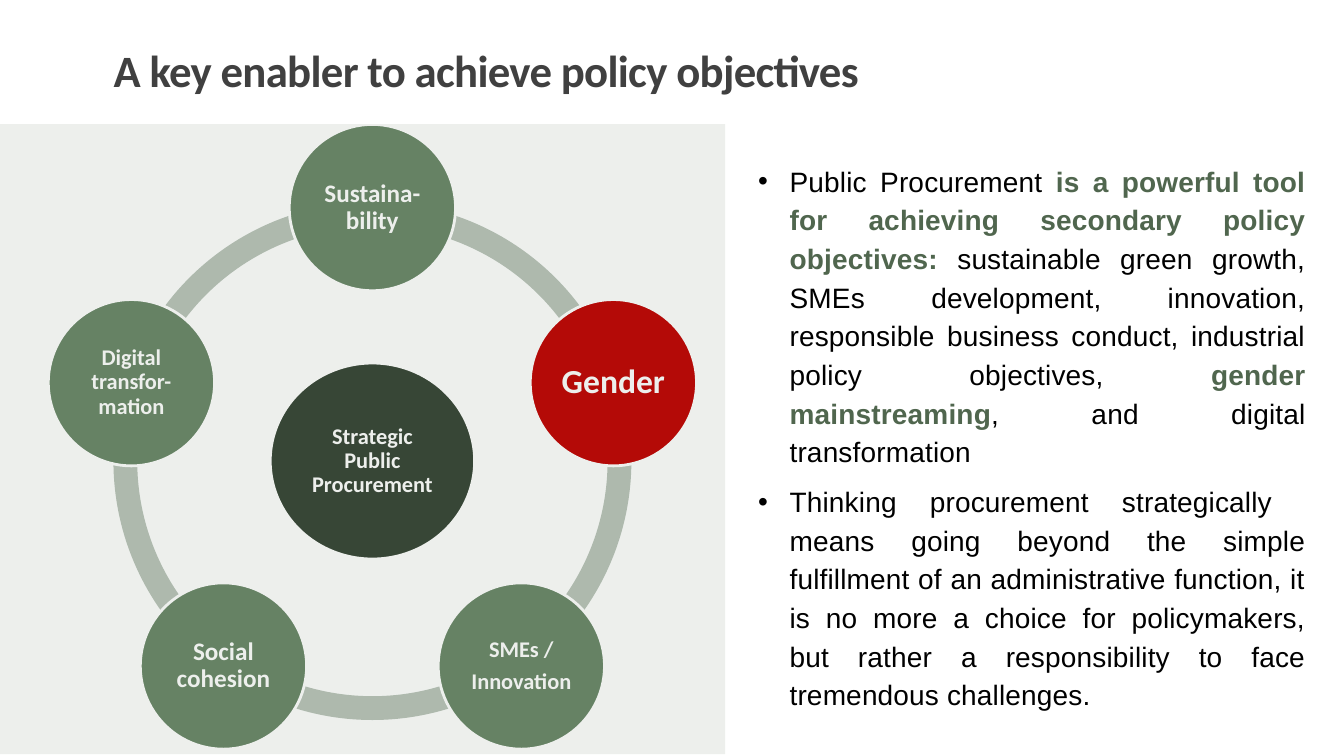
import math

from lxml import etree
from pptx import Presentation
from pptx.dml.color import RGBColor
from pptx.enum import shapes, text
from pptx.oxml import ns
from pptx.util import Pt

WHITE = RGBColor(0xFF, 0xFF, 0xFF)
BLACK = RGBColor(0x00, 0x00, 0x00)
TITLE_GREY = RGBColor(0x40, 0x40, 0x40)
RING_GREY = RGBColor(0xB9, 0xC3, 0xB8)
SAGE = RGBColor(0x69, 0x86, 0x67)
FOREST = RGBColor(0x35, 0x43, 0x34)
RED = RGBColor(0xC0, 0x00, 0x00)
EMPHASIS = RGBColor(0x50, 0x66, 0x4E)
VEIL = RGBColor(0x4F, 0x64, 0x4D)

deck = Presentation()
deck.slide_width, deck.slide_height = Pt(960), Pt(540)
slide = deck.slides.add_slide(deck.slide_layouts[5])


def add_plain(preset, left, top, width, height, color):
    shape = slide.shapes.add_shape(preset, Pt(left), Pt(top), Pt(width), Pt(height))
    shape.shadow.inherit = False
    shape.fill.solid()
    shape.fill.fore_color.rgb = color
    shape.line.fill.background()
    return shape


def add_circle(center_x, center_y, width, height, color, label, size):
    circle = add_plain(shapes.MSO_SHAPE.OVAL, center_x - width / 2, center_y - height / 2,
                       width, height, color)
    circle.line.color.rgb = WHITE
    circle.line.width = Pt(2)
    frame = circle.text_frame
    frame.word_wrap = True
    frame.vertical_anchor = text.MSO_ANCHOR.MIDDLE
    frame.margin_left = frame.margin_right = frame.margin_top = frame.margin_bottom = Pt(1.8)
    frame.text = label
    for line in frame.paragraphs:
        line.alignment = text.PP_ALIGN.CENTER
        line.line_spacing = 0.9
        line.space_after = Pt(0.35 * size)
        line.font.name = "Calibri"
        line.font.size = Pt(size)
        line.font.bold = True
        line.font.color.rgb = WHITE


# Title
title = slide.shapes.title
title.left, title.top, title.width, title.height = Pt(74), Pt(34), Pt(825), Pt(65)
title.text_frame.text = "A key enabler to achieve policy objectives"
title.text_frame.auto_size = text.MSO_AUTO_SIZE.NONE
title.text_frame.vertical_anchor = text.MSO_ANCHOR.TOP
heading = title.text_frame.paragraphs[0]
heading.alignment = text.PP_ALIGN.LEFT
heading.line_spacing = 0.8
heading.font.name = "Calibri"
heading.font.size = Pt(32)
heading.font.bold = True
heading.font.color.rgb = TITLE_GREY
heading.runs[0].font._element.set("spc", "-50")

# Policy ring: five arcs, each ending at a policy circle
HUB_X, HUB_Y = 266, 329.3
RING_SIZE, ORBIT, POLICY_SIZE = 370, 181, 118.8
policies = [
    ("Sustaina-bility", 18, SAGE),
    ("Gender", 24, RED),
    ("SMEs /\nInnovation", 16, SAGE),
    ("Social cohesion", 18, SAGE),
    ("Digital transfor-mation", 16, SAGE),
]
step = 360 / len(policies)
angles = [(270 + step * i) % 360 for i in range(len(policies))]
for angle in angles:
    arc = add_plain(shapes.MSO_SHAPE.BLOCK_ARC, HUB_X - RING_SIZE / 2, HUB_Y - RING_SIZE / 2,
                    RING_SIZE, RING_SIZE, RING_GREY)
    # Angles are stored in 60000ths of a degree, adjustments in 100000ths
    arc.adjustments[0] = (angle - step) % 360 * 0.6
    arc.adjustments[1] = angle * 0.6
    arc.adjustments[2] = 0.046

# Hub and policy circles
add_circle(HUB_X, HUB_Y, 146, 140, FOREST, "Strategic Public Procurement", 16)
for angle, (label, size, color) in zip(angles, policies):
    add_circle(HUB_X + ORBIT * math.cos(math.radians(angle)),
               HUB_Y + ORBIT * math.sin(math.radians(angle)),
               POLICY_SIZE, POLICY_SIZE, color, label, size)

# Explanation: each bullet is a list of (wording, emphasised)
bullets = [
    [("Public Procurement ", False),
     ("is a powerful tool for achieving secondary policy objectives: ", True),
     ("sustainable green growth, SMEs development, innovation, responsible business "
      "conduct, industrial policy objectives, ", False),
     ("gender mainstreaming", True),
     (", and digital transformation", False)],
    [("Thinking procurement strategically  means going beyond the simple fulfillment of an "
      "administrative function, it is no more a choice for policymakers, but rather a "
      "responsibility to face tremendous challenges.", False)],
]
explanation = slide.shapes.add_textbox(Pt(533), Pt(109.5), Pt(408), Pt(405)).text_frame
explanation.word_wrap = True
explanation.margin_left = explanation.margin_right = Pt(8.5)
explanation.margin_top = explanation.margin_bottom = Pt(4.25)
for i, pieces in enumerate(bullets):
    bullet = explanation.add_paragraph() if i else explanation.paragraphs[0]
    bullet.alignment = text.PP_ALIGN.JUSTIFY
    bullet.line_spacing = 1.15
    bullet.space_before = Pt(4 if i else 0)
    bullet.space_after = Pt(4)
    properties = bullet._p.get_or_add_pPr()
    properties.set("marL", str(Pt(22.5)))
    properties.set("indent", str(-Pt(22.5)))
    etree.SubElement(properties, ns.qn("a:buFont")).set("typeface", "Arial")
    etree.SubElement(properties, ns.qn("a:buChar")).set("char", "•")
    bullet.font.name = "Arial"
    bullet.font.size = Pt(20)
    for wording, emphasised in pieces:
        run = bullet.add_run()
        run.text = wording
        run.font.bold = emphasised
        run.font.color.rgb = EMPHASIS if emphasised else BLACK
        run.font._element.set("spc", "10")

# Translucent veil over the ring
veil = add_plain(shapes.MSO_SHAPE.RECTANGLE, 0, 88.6, 518, 450, VEIL)
veil_color = veil._element.spPr.find(".//" + ns.qn("a:srgbClr"))
etree.SubElement(veil_color, ns.qn("a:alpha")).set("val", "10000")

deck.save("out.pptx")
